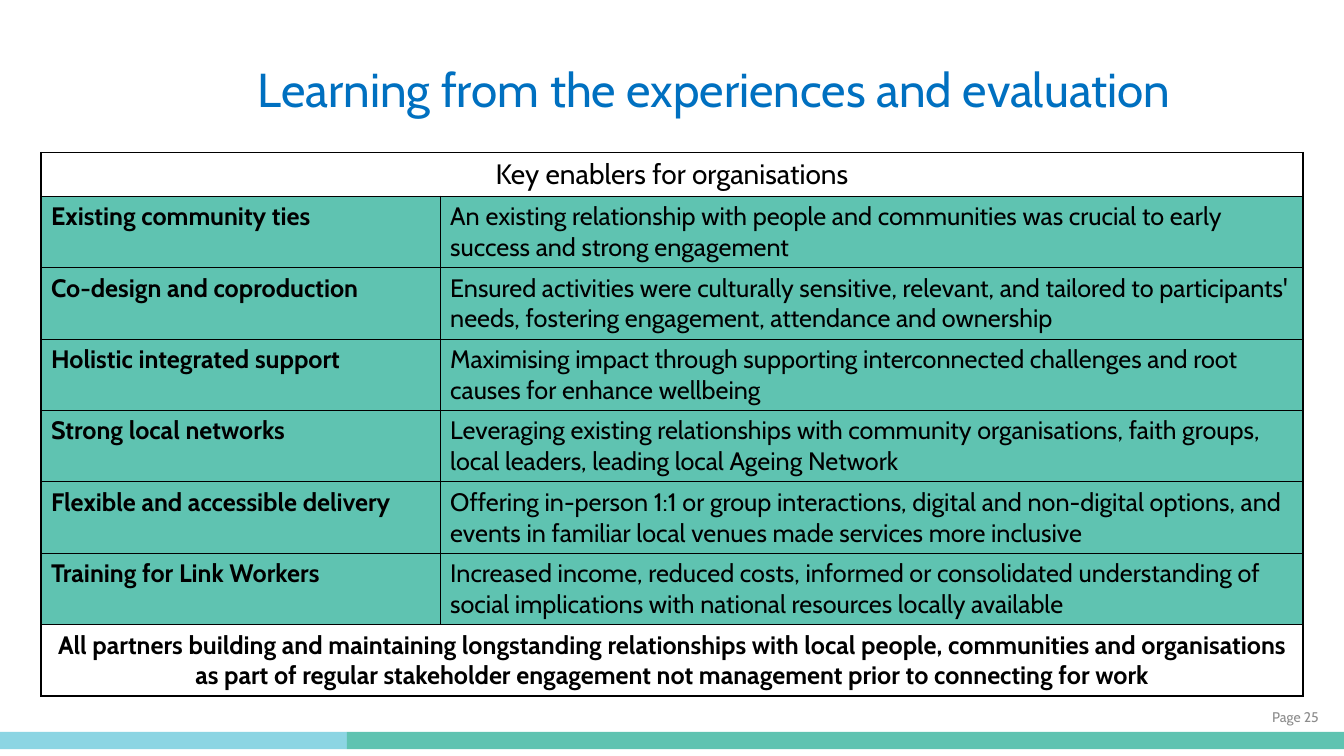
from lxml.etree import SubElement
from pptx import Presentation
from pptx.dml.color import RGBColor as Color
from pptx.enum.shapes import MSO_SHAPE as Shape
from pptx.enum.text import MSO_ANCHOR as Anchor, PP_ALIGN as Align
from pptx.oxml.ns import qn
from pptx.util import Pt

# Content
TITLE = "Learning from the experiences and evaluation"
PAGE_LABEL = "Page 25"
HEADING = "Key enablers for organisations"
ENABLERS = [
    ("Existing community ties",
     "An existing relationship with people and communities was crucial to early "
     "success and strong engagement"),
    ("Co-design and coproduction",
     "Ensured activities were culturally sensitive, relevant, and tailored to "
     "participants' needs, fostering engagement, attendance and ownership"),
    ("Holistic integrated support",
     "Maximising impact through supporting interconnected challenges and root "
     "causes for enhance wellbeing"),
    ("Strong local networks",
     "Leveraging existing relationships with community organisations, faith groups, "
     "local leaders, leading local Ageing Network"),
    ("Flexible and accessible delivery",
     "Offering in-person 1:1 or group interactions, digital and non-digital options, "
     "and events in familiar local venues made services more inclusive"),
    ("Training for Link Workers",
     "Increased income, reduced costs, informed or consolidated understanding of "
     "social implications with national resources locally available"),
]
CONCLUSION = ("All partners building and maintaining longstanding relationships with local "
              "people, communities and organisations as part of regular stakeholder "
              "engagement not management prior to connecting for work")

THEME = {
    "font": "Cabin",
    "title": "0070C0", "text": "000000", "muted": "8C8C8C",
    "paper": "FFFFFF", "teal": "5FC3B1", "sky": "8CD5E3", "border": "000000",
    "title_size": 34, "heading_size": 20, "body_size": 18, "page_size": 10,
}

# Layout
WIDTH, HEIGHT = 960, 540
BAND_TOP, BAND_HEIGHT, BAND_SPLIT = 522.8, 12.4, 247.8
TABLE_LEFT, TABLE_TOP = 29.3, 109
COLUMNS = (285.1, 616.4)
HEADING_HEIGHT, ROW_HEIGHT = 31, 51


def style_text(text_frame, text, size, color, align=Align.LEFT, bold=False):
    text_frame.word_wrap = True
    text_frame.text = text
    paragraph = text_frame.paragraphs[0]
    paragraph.alignment = align
    font = paragraph.runs[0].font
    font.name, font.size, font.bold = THEME["font"], Pt(THEME[size]), bold
    font.color.rgb = Color.from_string(THEME[color])
    return paragraph


def paint(fill, color):
    fill.solid()
    fill.fore_color.rgb = Color.from_string(THEME[color])


def add_band(slide, left, width, color):
    band = slide.shapes.add_shape(Shape.RECTANGLE, Pt(left), Pt(BAND_TOP),
                                  Pt(width), Pt(BAND_HEIGHT))
    band.shadow.inherit = False
    band.line.fill.background()
    paint(band.fill, color)


def add_borders(cell):
    properties = cell._tc.get_or_add_tcPr()
    for side in ("a:lnL", "a:lnR", "a:lnT", "a:lnB"):
        line = SubElement(properties, qn(side), w=str(Pt(1)))
        SubElement(SubElement(line, qn("a:solidFill")), qn("a:srgbClr"), val=THEME["border"])


def add_enabler_table(slide):
    rows = [(HEADING, "")] + ENABLERS + [(CONCLUSION, "")]
    heights = [HEADING_HEIGHT] + [ROW_HEIGHT] * (len(rows) - 1)
    table = slide.shapes.add_table(len(rows), len(COLUMNS), Pt(TABLE_LEFT), Pt(TABLE_TOP),
                                   Pt(sum(COLUMNS)), Pt(sum(heights))).table
    table.first_row = table.horz_banding = False
    for column, width in zip(table.columns, COLUMNS):
        column.width = Pt(width)
    for index, (texts, height) in enumerate(zip(rows, heights)):
        table.rows[index].height = Pt(height)
        spans = index in (0, len(rows) - 1)
        if spans:
            table.cell(index, 0).merge(table.cell(index, 1))
        for position, text in enumerate(texts):
            cell = table.cell(index, position)
            add_borders(cell)
            paint(cell.fill, "paper" if spans else "teal")
            if text:
                style_text(cell.text_frame, text,
                           "heading_size" if index == 0 else "body_size", "text",
                           Align.CENTER if spans else Align.LEFT,
                           bold=index > 0 and position == 0)


def main():
    presentation = Presentation()
    presentation.slide_width, presentation.slide_height = Pt(WIDTH), Pt(HEIGHT)
    slide = presentation.slides.add_slide(presentation.slide_layouts[6])

    # Footer bands and page number
    add_band(slide, 0, BAND_SPLIT, "sky")
    add_band(slide, BAND_SPLIT, WIDTH - BAND_SPLIT, "teal")
    page = slide.shapes.add_textbox(Pt(733), Pt(493.2), Pt(216), Pt(28.8))
    page.text_frame.vertical_anchor = Anchor.BOTTOM
    style_text(page.text_frame, PAGE_LABEL, "page_size", "muted", Align.RIGHT)

    # Title
    title = slide.shapes.add_textbox(Pt(177.1), Pt(15.8), Pt(771.8), Pt(99.4))
    paint(title.fill, "paper")
    title.text_frame.vertical_anchor = Anchor.MIDDLE
    style_text(title.text_frame, TITLE, "title_size", "title").line_spacing = 0.9

    # Table of enablers
    add_enabler_table(slide)
    presentation.save("out.pptx")


if __name__ == "__main__":
    main()
